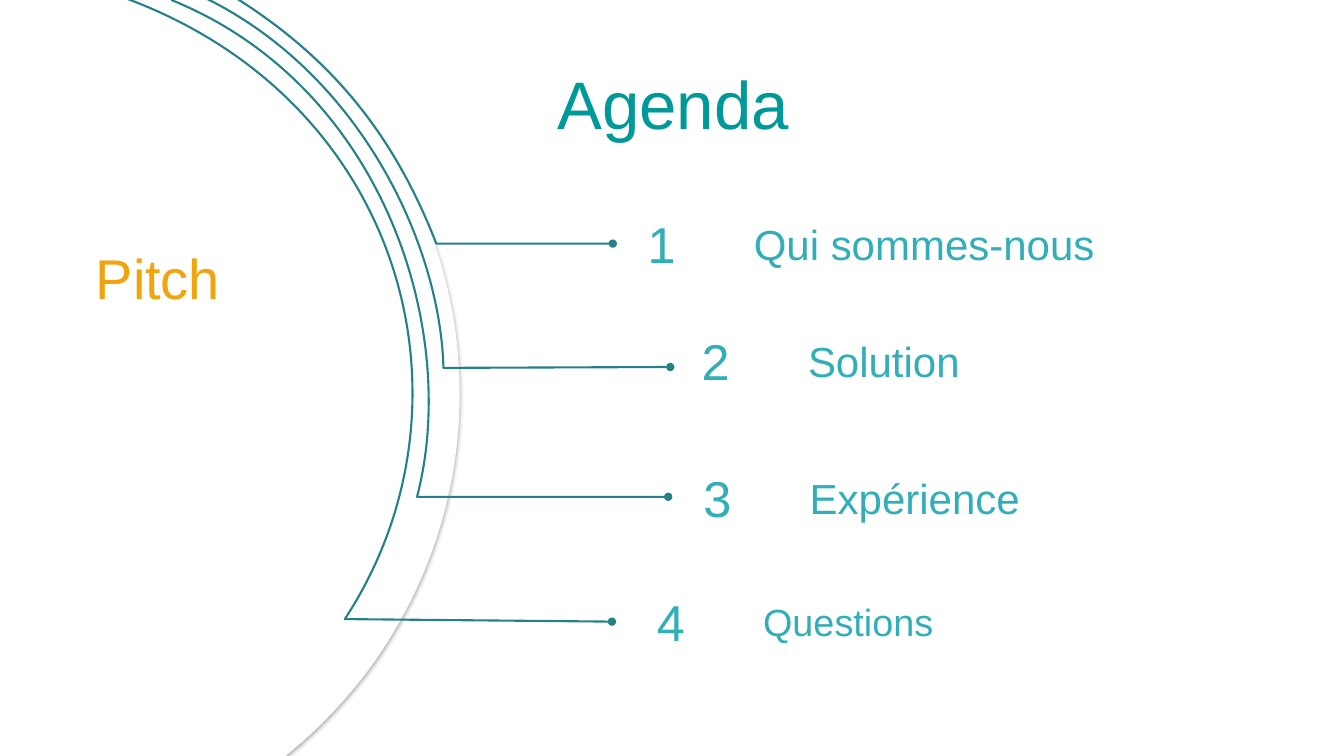
"""Build an agenda slide with curved leaders on a 160 by 90 grid."""
from dataclasses import dataclass
from typing import Optional

import lxml.etree
import pptx
import pptx.dml.color
import pptx.enum.text
import pptx.oxml.ns
import pptx.util

Point = tuple[float, float]
Segment = tuple[Point, ...]
ALIGN = pptx.enum.text.PP_ALIGN
ANCHOR = pptx.enum.text.MSO_ANCHOR
COLS, ROWS = 160, 90


@dataclass(frozen=True)
class Theme:
    font: str = "Arial"
    panel: str = "FFFFFF"
    shadow: str = "000000"
    leader: str = "258188"
    item: str = "32AEB8"
    pitch: str = "F2A40D"
    title: str = "009999"
    title_size: float = 48
    pitch_size: float = 40
    number_size: float = 36
    label_size: float = 30
    last_label_size: float = 27
    leader_width: float = 1.5


@dataclass(frozen=True)
class Panel:
    start: Point
    segments: tuple[Segment, ...]
    alpha: int = 100
    shadow: bool = False


@dataclass(frozen=True)
class Item:
    label: str
    left: float
    middle: float
    size: float
    start: Point
    curve: Segment
    end: Point


T = Theme()
PANELS = (
    Panel((-0.5, -0.2), (
        ((28.3, -0.2),), ((30.1, 1),),
        ((37.1, 5.6), (43, 11.8), (47.3, 19.3)),
        ((57.2, 36.4), (57.2, 57.4), (47.3, 74.5)),
        ((44.3, 79.8), (40.3, 84.5), (35.9, 88.4)),
        ((34, 90),), ((-0.5, 90),)), shadow=True),
    Panel((-0.1, -0.8), (
        ((23.9, -0.8),), ((26.5, 0.6),),
        ((34.4, 5.2), (41.3, 11.9), (46, 20)),
        ((55.6, 36.6), (55.6, 56.9), (46.1, 73.3)),
        ((42.5, 79.4), (37.8, 84.7), (32.3, 88.9)),
        ((31.6, 89.4),), ((0, 89.4),)), alpha=50),
    Panel((0, -0.2), (
        ((20.4, -0.2),), ((22.7, 0.8),),
        ((31.6, 5.2), (39.1, 12.2), (44.3, 21.1)),
        ((53.4, 37), (53.5, 56.4), (44.3, 72.4)),
        ((40.3, 79.2), (34.8, 85), (28.4, 89.3)),
        ((27.2, 90),), ((0, 90),)), alpha=50),
    Panel((0, -0.2), (
        ((13.7, -0.2),), ((15.8, 0.5),),
        ((27, 4.2), (36.5, 11.9), (42.6, 22.4)),
        ((51.4, 37.6), (51.4, 56.4), (42.6, 71.6)),
        ((38.2, 79.2), (31.9, 85.3), (24.6, 89.6)),
        ((23.9, 90),), ((0, 90),))),
)
ITEMS = (
    Item("Qui sommes-nous", 72.45, 29, T.label_size, (28.3, -0.1),
         ((40.6, 7.7), (47.3, 17.2), (51.95, 29)), (72.95, 29)),
    Item("Solution", 78.9, 42.95, T.label_size, (24.1, -0.4),
         ((42.8, 8.6), (52.4, 29), (52.8, 43.8)), (79.8, 43.7)),
    Item("Expérience", 79.1, 59.2, T.label_size, (20.4, 0),
         ((45.8, 10.3), (54.8, 39.5), (49.65, 59.15)), (79.55, 59.15)),
    Item("Questions", 73.55, 74, T.last_label_size, (15.25, -0.1),
         ((48.5, 12.4), (57.6, 48.5), (41.05, 73.7)), (72.85, 74)),
)

prs = pptx.Presentation()
prs.slide_width = pptx.util.Inches(13.333)
prs.slide_height = pptx.util.Inches(7.5)


def x(col: float) -> int:
    """Return the length of a number of grid columns."""
    return round(prs.slide_width * col / COLS)


def y(row: float) -> int:
    """Return the length of a number of grid rows."""
    return round(prs.slide_height * row / ROWS)


def rgb(color: str) -> pptx.dml.color.RGBColor:
    """Return a colour object for a hex string."""
    return pptx.dml.color.RGBColor.from_string(color)


def child(parent, tag: str, **attrs: str):
    """Append a drawing element to a parent."""
    return lxml.etree.SubElement(parent, pptx.oxml.ns.qn(tag), attrs)


def add_outline(s, start: Point, segments: tuple[Segment, ...], close: bool):
    """Draw a freeform of lines and cubic curves without a shadow."""
    anchors = [start] + [seg[-1] for seg in segments]
    fb = s.shapes.build_freeform(x(start[0]), y(start[1]))
    fb.add_line_segments([(x(col), y(row)) for col, row in anchors[1:]], close=close)
    sp = fb.convert_to_shape()
    sp.shadow.inherit = False
    outline = next(sp._element.iter(pptx.oxml.ns.qn("a:path")))
    lines = outline.findall(pptx.oxml.ns.qn("a:lnTo"))
    right = max(col for col, row in anchors)
    for a, seg, line in zip(anchors, segments, lines):
        if len(seg) == 3:
            b, c, d = seg
            right = max(right, (a[0] + 3 * b[0] + 3 * c[0] + d[0]) / 8)
            curve = child(outline, "a:cubicBezTo")
            for col, row in seg:
                child(curve, "a:pt", x=str(x(col) - sp.left), y=str(y(row) - sp.top))
            outline.replace(line, curve)
    sp.width = x(right) - sp.left
    outline.set("w", str(sp.width))
    return sp


def add_panel(s, panel: Panel) -> None:
    """Draw one filled arc panel."""
    sp = add_outline(s, panel.start, panel.segments, True)
    sp.line.fill.background()
    sp.fill.solid()
    sp.fill.fore_color.rgb = rgb(T.panel)
    spPr = sp._element.spPr
    if panel.alpha < 100:
        clr = spPr.find(pptx.oxml.ns.qn("a:solidFill"))[0]
        child(clr, "a:alpha", val=str(panel.alpha * 1000))
    if panel.shadow:
        effects = spPr.find(pptx.oxml.ns.qn("a:effectLst"))
        outer = child(effects, "a:outerShdw", blurRad=str(pptx.util.Pt(3.1)),
                      dist=str(pptx.util.Pt(1.8)), dir="5400000", rotWithShape="0")
        clr = child(outer, "a:srgbClr", val=T.shadow)
        child(clr, "a:alpha", val="35000")


def add_leader(s, item: Item) -> None:
    """Draw the curved leader of an agenda item."""
    sp = add_outline(s, item.start, (item.curve, (item.end,)), False)
    sp.fill.background()
    sp.line.color.rgb = rgb(T.leader)
    sp.line.width = pptx.util.Pt(T.leader_width)
    child(sp._element.spPr.find(pptx.oxml.ns.qn("a:ln")), "a:tailEnd", type="oval")


def add_text(s, text: str, *, left: float, top: float, width: float, height: float,
             size: float, color: str, align: Optional[ALIGN] = None,
             anchor: ANCHOR = ANCHOR.MIDDLE, inset: float = 1.4, before: float = 0) -> None:
    """Add a one-line text box."""
    sp = s.shapes.add_textbox(x(left), y(top), x(width), y(height))
    tf = sp.text_frame
    tf.word_wrap = True
    tf.vertical_anchor = anchor
    tf.margin_left = tf.margin_right = x(inset)
    p = tf.paragraphs[0]
    p.alignment = align
    p.space_before = pptx.util.Pt(before)
    r = p.add_run()
    r.text = text
    r.font.name, r.font.size = T.font, pptx.util.Pt(size)
    r.font.color.rgb = rgb(color)


def main() -> None:
    """Build and save the slide."""
    s = prs.slides.add_slide(prs.slide_layouts[6])
    for panel in PANELS:
        add_panel(s, panel)
    for number, item in enumerate(ITEMS, 1):
        add_text(s, item.label, left=item.left + 15.9, top=item.middle - 3.65, width=59.2,
                 height=7.3, size=item.size, color=T.item)
        add_text(s, str(number), left=item.left, top=item.middle - 4.25, width=12.6,
                 height=8.5, size=T.number_size, color=T.item, align=ALIGN.CENTER)
        add_leader(s, item)
    add_text(s, "Pitch", left=10.2, top=28.4, width=39, height=9.2, size=T.pitch_size,
             color=T.pitch, anchor=ANCHOR.TOP, inset=1.2)
    add_text(s, "Agenda", left=0.15, top=7.2, width=COLS, height=10.1, size=T.title_size,
             color=T.title, align=ALIGN.CENTER, inset=1.2, before=6)
    prs.save("out.pptx")


if __name__ == "__main__":
    main()
